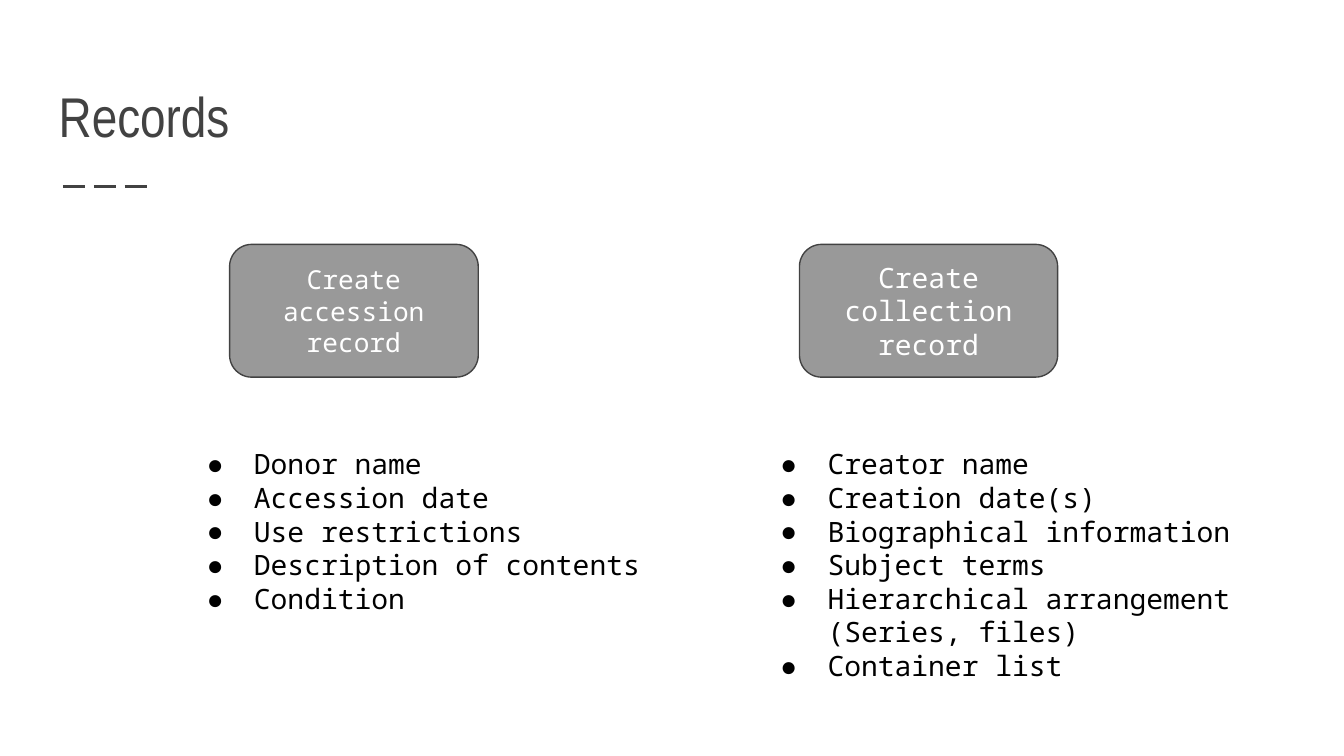
import dataclasses

import pptx
import pptx.dml.color
import pptx.enum.dml
import pptx.enum.shapes
import pptx.enum.text
import pptx.oxml
import pptx.oxml.ns
import pptx.shapes.autoshape
import pptx.slide
import pptx.text.text
import pptx.util

Cm = pptx.util.Cm
Pt = pptx.util.Pt
RGB = pptx.dml.color.RGBColor
Align = pptx.enum.text.PP_ALIGN
Anchor = pptx.enum.text.MSO_ANCHOR

DARK = RGB(0x42, 0x42, 0x42)
GREY = RGB(0x99, 0x99, 0x99)
WHITE = RGB(0xFF, 0xFF, 0xFF)
BLACK = RGB(0x00, 0x00, 0x00)
MONO = "Noto Sans Mono"
NARROW = "Arial Narrow"


@dataclasses.dataclass
class Record:
    label: str
    left: float
    width: float
    size: int
    list_left: float
    items: list[str]


RECORDS = [
    Record("Create accession record", 4.34, 4.7, 14, 3.28, [
        "Donor name", "Accession date", "Use restrictions",
        "Description of contents", "Condition"]),
    Record("Create collection record", 15.11, 4.88, 15, 14.12, [
        "Creator name", "Creation date(s)", "Biographical information",
        "Subject terms", "Hierarchical arrangement (Series, files)",
        "Container list"]),
]


def assign(target: object, values: dict) -> None:
    for name, value in values.items():
        setattr(target, name, value)


def set_frame(frame: pptx.text.text.TextFrame, anchor: Anchor) -> None:
    inset = Cm(0.25)
    assign(frame, {
        "word_wrap": True, "vertical_anchor": anchor,
        "margin_left": inset, "margin_right": inset,
        "margin_top": inset, "margin_bottom": inset,
    })


def write(para: pptx.text.text._Paragraph, text: str, align: Align,
          face: str, size: int, color: RGB) -> None:
    para.alignment = align
    run = para.add_run()
    run.text = text
    assign(run.font, {"name": face, "size": Pt(size)})
    run.font.color.rgb = color


def add_bullet(para: pptx.text.text._Paragraph) -> None:
    props = para._p.get_or_add_pPr()
    props.set("marL", str(Cm(1.27)))
    props.set("indent", str(-Cm(0.89)))
    space = pptx.oxml.ns.nsdecls("a")
    for body in (
        f'<a:buClr {space}><a:srgbClr val="{BLACK}"/></a:buClr>',
        f'<a:buFont {space} typeface="{MONO}"/>',
        f'<a:buChar {space} char="●"/>',
    ):
        props.append(pptx.oxml.parse_xml(body))


def add_title(slide: pptx.slide.Slide, text: str) -> None:
    title = slide.shapes.title
    assign(title, {"left": Cm(0.86), "top": Cm(1.04),
                   "width": Cm(23.67), "height": Cm(2.03)})
    set_frame(title.text_frame, Anchor.BOTTOM)
    write(title.text_frame.paragraphs[0], text, Align.LEFT, NARROW, 30, DARK)


def add_rule(slide: pptx.slide.Slide) -> None:
    """Draw the dashed line under the title."""
    rule = slide.shapes.add_connector(
        pptx.enum.shapes.MSO_CONNECTOR.STRAIGHT,
        Cm(1.19), Cm(3.53), Cm(2.9), Cm(3.53))
    assign(rule.line, {"width": Pt(1.5),
                       "dash_style": pptx.enum.dml.MSO_LINE.LONG_DASH})
    rule.line.color.rgb = DARK
    space = pptx.oxml.ns.nsdecls("a")
    rule._element.spPr.append(pptx.oxml.parse_xml(f"<a:effectLst {space}/>"))


def add_box(slide: pptx.slide.Slide, record: Record) -> None:
    box = slide.shapes.add_shape(
        pptx.enum.shapes.MSO_SHAPE.FLOWCHART_ALTERNATE_PROCESS,
        Cm(record.left), Cm(4.62), Cm(record.width), Cm(2.51))
    box.shadow.inherit = False
    box.fill.solid()
    box.fill.fore_color.rgb = GREY
    box.line.color.rgb = DARK
    box.line.width = Pt(0.75)
    set_frame(box.text_frame, Anchor.MIDDLE)
    write(box.text_frame.paragraphs[0], record.label, Align.CENTER,
          MONO, record.size, WHITE)


def add_list(slide: pptx.slide.Slide, record: Record) -> None:
    frame = slide.shapes.add_textbox(
        Cm(record.list_left), Cm(8.2), Cm(9.55), Cm(4.65)).text_frame
    set_frame(frame, Anchor.TOP)
    for index, item in enumerate(record.items):
        para = frame.add_paragraph() if index else frame.paragraphs[0]
        write(para, item, Align.LEFT, MONO, 15, BLACK)
        add_bullet(para)


def main() -> None:
    deck = pptx.Presentation()
    assign(deck, {"slide_width": Cm(25.4), "slide_height": Cm(14.29)})
    slide = deck.slides.add_slide(deck.slide_layouts.get_by_name("Title Only"))
    add_rule(slide)
    add_title(slide, "Records")
    for record in RECORDS:
        add_box(slide, record)
        add_list(slide, record)
    deck.save("out.pptx")


if __name__ == "__main__":
    main()
